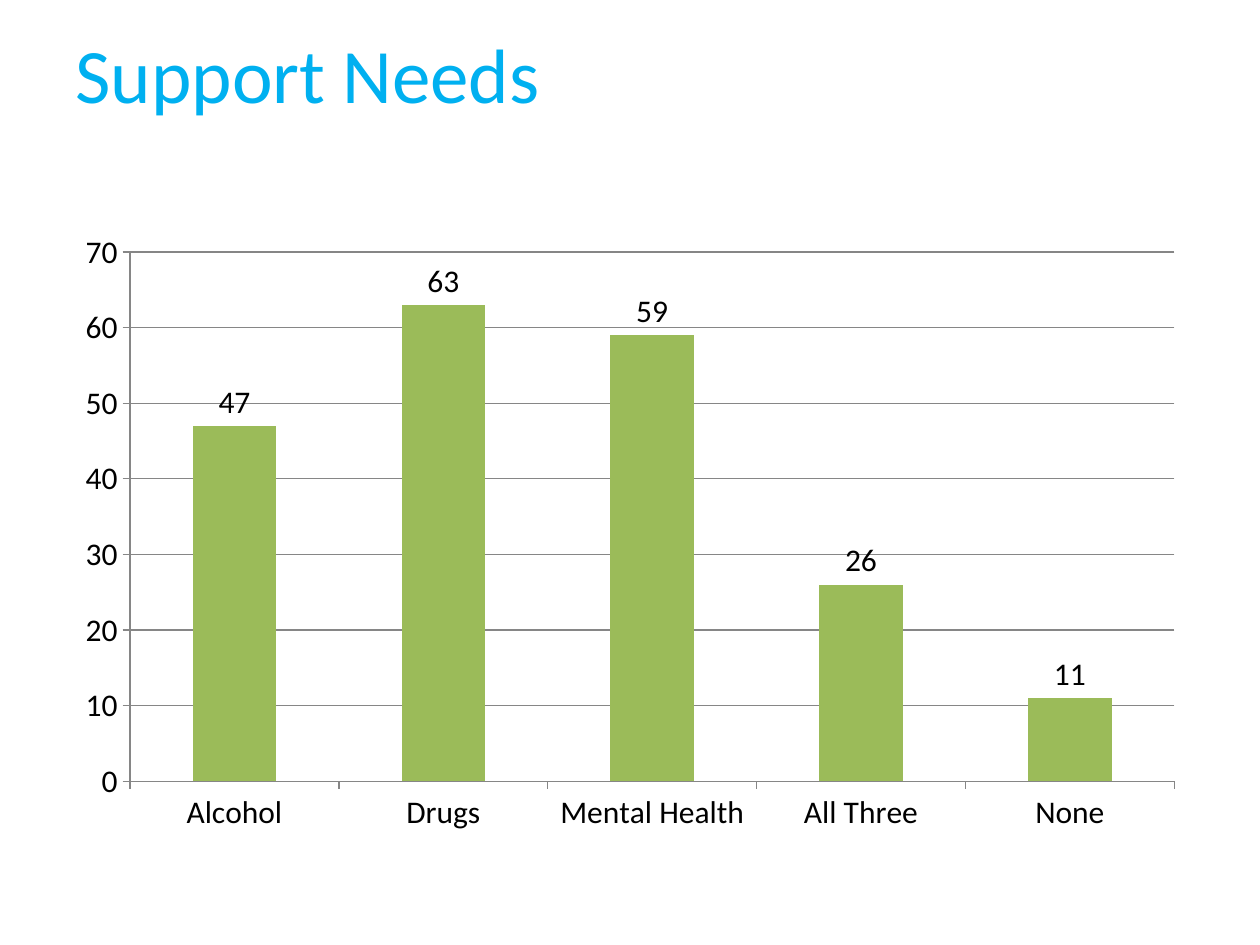
"""Build the Support Needs slide with its column chart."""
from pptx import Presentation
from pptx import util as u
from pptx.chart.data import CategoryChartData
from pptx.dml.color import RGBColor
from pptx.enum import chart as charts, text

COLOURS = {"title": "00B0F0", "bar": "9BBB59", "text": "000000", "line": "868686"}
NEEDS = {"Alcohol": 47, "Drugs": 63, "Mental Health": 59, "All Three": 26, "None": 11}


class SlideBuilder:
    """Hold the style and the current slide."""

    def __init__(self, slide, font="Calibri"):
        self.slide = slide
        self.font = font

    def colour(self, name):
        return RGBColor.from_string(COLOURS[name])

    def style_font(self, font, size, colour):
        font.name = self.font
        font.size = u.Pt(size)
        font.bold = False
        font.color.rgb = self.colour(colour)

    def style_line(self, line):
        line.color.rgb = self.colour("line")
        line.width = u.Pt(0.75)

    def title(self, wording, left, top, width, height):
        shape = self.slide.shapes.title
        shape.left, shape.top = u.Inches(left), u.Inches(top)
        shape.width, shape.height = u.Inches(width), u.Inches(height)
        frame = shape.text_frame
        frame.text = wording
        frame.word_wrap = True
        frame.vertical_anchor = text.MSO_ANCHOR.MIDDLE
        paragraph = frame.paragraphs[0]
        paragraph.alignment = text.PP_ALIGN.LEFT
        self.style_font(paragraph.runs[0].font, 44, "title")

    def column_chart(self, name, values, left, top, width, height):
        data = CategoryChartData()
        data.categories = list(values)
        data.add_series(name, list(values.values()))
        chart = self.slide.shapes.add_chart(
            charts.XL_CHART_TYPE.COLUMN_CLUSTERED,
            u.Inches(left), u.Inches(top), u.Inches(width), u.Inches(height), data,
        ).chart
        chart.has_title = False
        chart.has_legend = False
        self.style_font(chart.font, 18, "text")

        for axis in (chart.category_axis, chart.value_axis):
            axis.major_tick_mark = charts.XL_TICK_MARK.OUTSIDE
            axis.minor_tick_mark = charts.XL_TICK_MARK.NONE
            self.style_line(axis.format.line)
        value_axis = chart.value_axis
        value_axis.minimum_scale, value_axis.maximum_scale = 0, 70
        value_axis.major_unit = 10
        value_axis.has_major_gridlines = True
        self.style_line(value_axis.major_gridlines.format.line)

        plot = chart.plots[0]
        plot.gap_width = 150
        plot.vary_by_categories = False
        fill = plot.series[0].format.fill
        fill.solid()
        fill.fore_color.rgb = self.colour("bar")
        plot.has_data_labels = True
        labels = plot.data_labels
        labels.show_value = True
        labels.position = charts.XL_LABEL_POSITION.OUTSIDE_END
        self.style_font(labels.font, 18, "text")


def main():
    presentation = Presentation()
    presentation.slide_width = u.Inches(10)
    presentation.slide_height = u.Inches(7.5)
    title_only = presentation.slide_layouts[5]
    builder = SlideBuilder(presentation.slides.add_slide(title_only))
    builder.title("Support Needs", 0.5, 0, 7.99, 1.15)
    builder.column_chart("Series 1", NEEDS, 0.5, 1.75, 9, 4.95)
    presentation.save("out.pptx")


if __name__ == "__main__":
    main()
